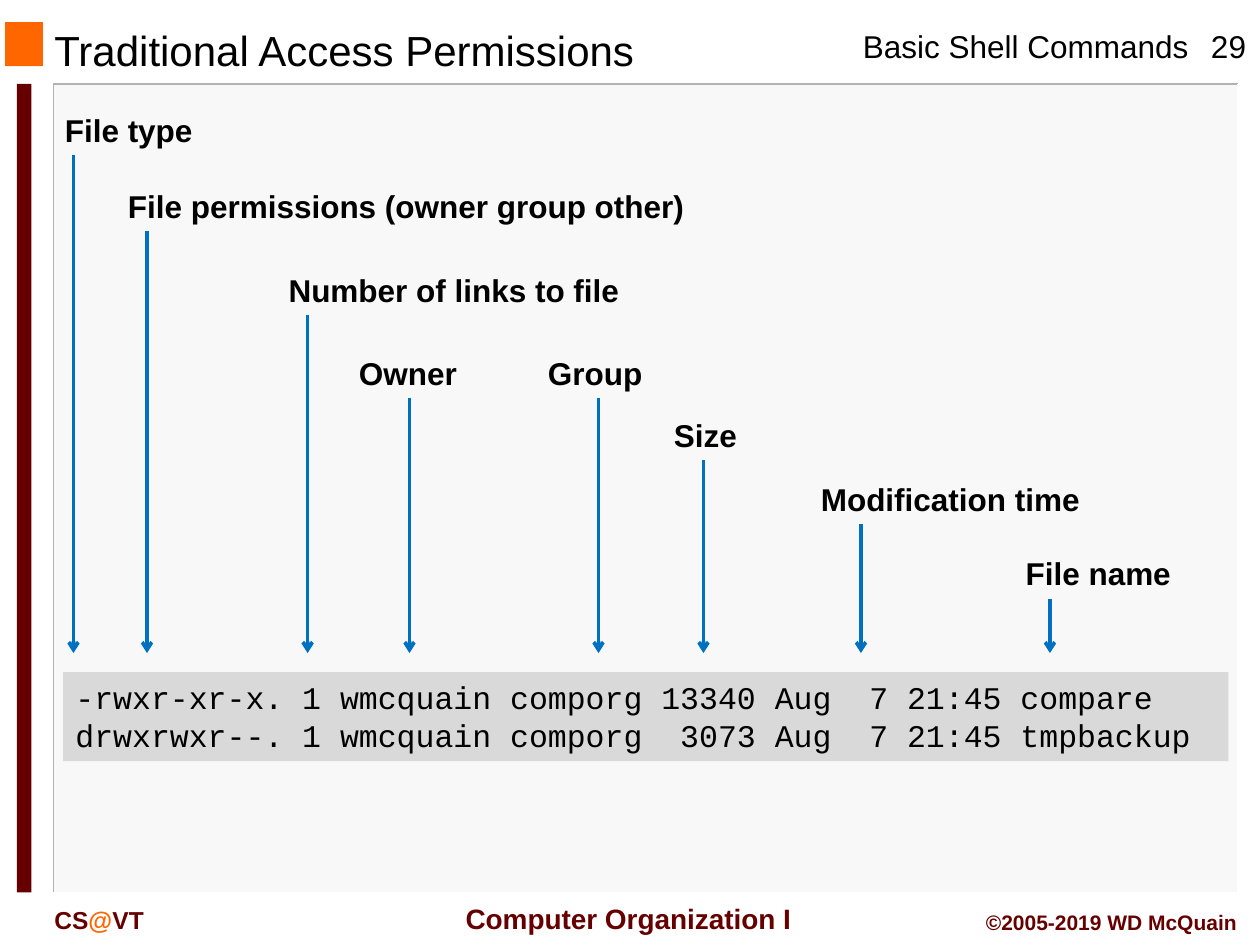
from dataclasses import dataclass
from lxml.etree import SubElement
from pptx import Presentation
from pptx.dml.color import RGBColor
from pptx.enum.shapes import MSO_CONNECTOR as Connector, MSO_SHAPE as Shape
from pptx.enum.text import MSO_ANCHOR as Anchor, PP_ALIGN as Align
from pptx.oxml.ns import qn
from pptx.slide import Slide
from pptx.util import Inches, Pt

BLACK = RGBColor(0x00, 0x00, 0x00)
WHITE = RGBColor(0xFF, 0xFF, 0xFF)
MAROON = RGBColor(0x66, 0x00, 0x00)
ORANGE = RGBColor(0xFF, 0x66, 0x00)
BLUE = RGBColor(0x00, 0x70, 0xC0)
PALE = RGBColor(0xF8, 0xF8, 0xF8)
SILVER = RGBColor(0xB2, 0xB2, 0xB2)
GREY = RGBColor(0xD9, 0xD9, 0xD9)

LABEL_HEIGHT = 4.8
ARROW_END = 62.2
PANEL = (5.1, 8, 112.8, 77)
FIELDS = [
    ("File type", 5, 10, 17, 7),
    ("File permissions (owner group other)", 11, 17.2, 57.7, 14),
    ("Number of links to file", 26.3, 25.2, 57.7, 29.3),
    ("Owner", 33, 33.1, 16, 39),
    ("Group", 51, 33.1, 16, 57),
    ("Size", 63, 39, 16, 67),
    ("Modification time", 77, 45.1, 31.8, 82),
    ("File name", 96.5, 52.2, 17.5, 100),
]
LISTING = [
    "-rwxr-xr-x. 1 wmcquain comporg 13340 Aug  7 21:45 compare",
    "drwxrwxr--. 1 wmcquain comporg  3073 Aug  7 21:45 tmpbackup",
]


@dataclass
class Sheet:
    """Draws styled elements on one slide, measured on a grid of twelfths of an inch."""

    slide: Slide
    unit: int = Inches(1) // 12
    font: str = "Arial"

    def grid(self, *cells):
        return [round(cell * self.unit) for cell in cells]

    def block(self, area, color):
        block = self.slide.shapes.add_shape(Shape.RECTANGLE, *self.grid(*area))
        block.shadow.inherit = False
        block.fill.solid()
        block.fill.fore_color.rgb = color
        block.line.fill.background()
        return block

    def edge(self, corners, color):
        start, *rest = [self.grid(*corner) for corner in corners]
        builder = self.slide.shapes.build_freeform(*start)
        builder.add_line_segments(rest, close=False)
        edge = builder.convert_to_shape()
        edge.shadow.inherit = False
        edge.fill.background()
        edge.line.color.rgb = color
        edge.line.width = Pt(1)

    def typeset(self, frame, lines, size=18, align=Align.LEFT, **formats):
        style = {"name": self.font, "size": Pt(size), **formats}
        for index, runs in enumerate(lines):
            paragraph = frame.paragraphs[0] if index == 0 else frame.add_paragraph()
            paragraph.alignment = align
            for words, color in runs:
                run = paragraph.add_run()
                run.text = words
                run.font.color.rgb = color
                for key, value in style.items():
                    setattr(run.font, key, value)

    def text(self, area, *runs, wrap=True, anchor=Anchor.TOP, **formats):
        frame = self.slide.shapes.add_textbox(*self.grid(*area)).text_frame
        frame.word_wrap = wrap
        frame.vertical_anchor = anchor
        self.typeset(frame, [runs], **formats)

    def listing(self, area, lines):
        frame = self.block(area, GREY).text_frame
        frame.word_wrap = True
        frame.vertical_anchor = Anchor.TOP
        self.typeset(frame, [[(line, BLACK)] for line in lines], name="Courier New")

    def arrow(self, column, top, bottom):
        ends = self.grid(column, top, column, bottom)
        arrow = self.slide.shapes.add_connector(Connector.STRAIGHT, *ends)
        arrow.line.color.rgb = BLUE
        arrow.line.width = Pt(2)
        properties = arrow._element.spPr
        SubElement(properties.find(qn("a:ln")), qn("a:tailEnd"), type="arrow")
        SubElement(properties, qn("a:effectLst"))


def main():
    deck = Presentation()
    deck.slide_width, deck.slide_height = Inches(10), Inches(7.5)
    sheet = Sheet(deck.slides.add_slide(deck.slide_layouts[6]))

    left, top, width, height = PANEL
    right, bottom = left + width, top + height
    sheet.block(PANEL, PALE)
    sheet.edge([(right, top), (left, top), (left, bottom)], SILVER)
    sheet.edge([(right, top), (right, bottom), (left, bottom)], WHITE)
    sheet.block((0.5, 2.1, 3.6, 4.2), ORANGE)
    sheet.block((1.6, 8, 1.4, 77), MAROON)

    sheet.text((81, 2, 34.2, 4.8), ("Basic Shell Commands", BLACK), wrap=False)
    sheet.text((113, 2, 8, 4.8), ("29", BLACK), align=Align.CENTER)
    sheet.text((4, 2.4, 76, 4.6), ("Traditional Access Permissions", BLACK),
               size=24, anchor=Anchor.MIDDLE)
    sheet.text((42.4, 85.3, 34.9, 4.4), ("Computer Organization I", MAROON),
               size=16, align=Align.CENTER, anchor=Anchor.MIDDLE, bold=True)
    sheet.text((4, 85.6, 18, 4), ("CS", MAROON), ("@", ORANGE), ("VT", MAROON),
               size=14, bold=True)
    sheet.text((89, 86, 30, 3.6), ("©2005-2019 WD McQuain", MAROON),
               size=12, align=Align.RIGHT, bold=True)

    for label, column, row, span, target in FIELDS:
        sheet.text((column, row, span, LABEL_HEIGHT), (label, BLACK), bold=True)
        sheet.arrow(target, row + LABEL_HEIGHT, ARROW_END)
    sheet.listing((6, 64, 111, 8.5), LISTING)

    deck.save("out.pptx")


if __name__ == "__main__":
    main()
